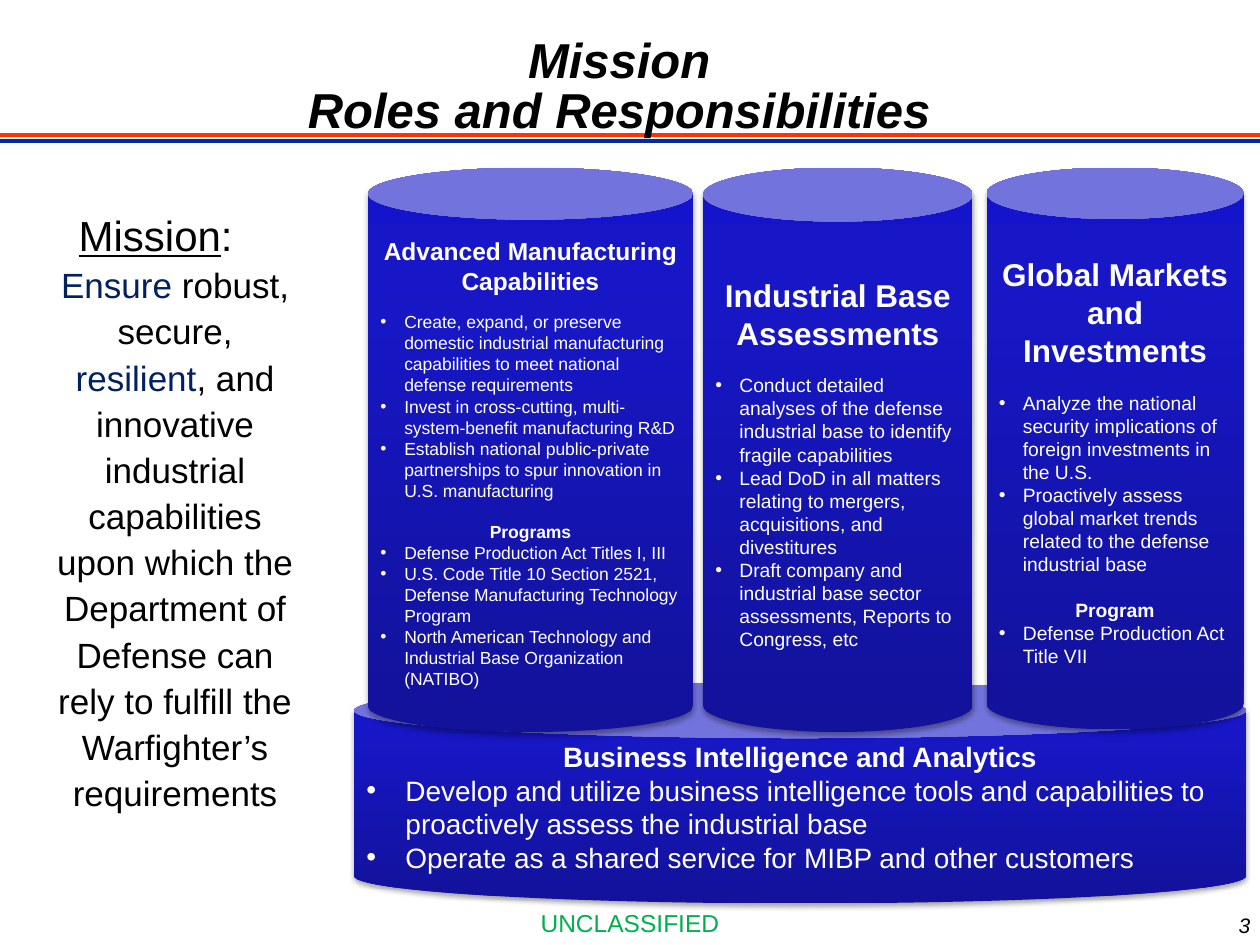
from copy import deepcopy
from dataclasses import dataclass

from lxml import etree
from pptx import Presentation
from pptx.dml.color import RGBColor
from pptx.enum.shapes import MSO_CONNECTOR, MSO_SHAPE
from pptx.enum.text import MSO_ANCHOR, PP_ALIGN
from pptx.oxml.ns import qn
from pptx.util import Inches, Pt

CAN = MSO_SHAPE.CAN
STRAIGHT = MSO_CONNECTOR.STRAIGHT
TOP, MIDDLE = MSO_ANCHOR.TOP, MSO_ANCHOR.MIDDLE
LEFT, CENTER, RIGHT = PP_ALIGN.LEFT, PP_ALIGN.CENTER, PP_ALIGN.RIGHT


@dataclass(frozen=True)
class Theme:
    font: str = "Arial"
    black: str = "000000"
    white: str = "FFFFFF"
    navy: str = "002060"
    green: str = "00B050"
    rule_blue: str = "032AA1"
    rule_red: str = "FF3300"
    can_stops: tuple = ((0, "12129A"), (80, "1717C8"), (100, "1414CC"))
    title: int = 28
    mission_heading: int = 24
    mission: int = 20
    pillar_heading: int = 18
    base: int = 16
    small_heading: int = 14
    footer: int = 12
    pillar: int = 11
    small: int = 10


theme = Theme()

presentation = Presentation()
presentation.slide_width = Inches(10)
presentation.slide_height = Inches(7.5)
slide = presentation.slides.add_slide(presentation.slide_layouts[6])


def add_text(left, top, width, height, anchor=TOP):
    frame = slide.shapes.add_textbox(
        Inches(left), Inches(top), Inches(width), Inches(height)
    ).text_frame
    frame.word_wrap = True
    frame.vertical_anchor = anchor
    return frame


def write(paragraph, text, size, color, align=LEFT, bold=False, italic=False):
    paragraph.alignment = align
    run = paragraph.add_run()
    run.text = text
    run.font.name = theme.font
    run.font.size = Pt(size)
    run.font.color.rgb = RGBColor.from_string(color)
    run.font.bold = bold
    run.font.italic = italic
    return run


for height, color, weight in (
    (1.12, theme.rule_blue, 2.25),
    (1.07, theme.rule_red, 2),
):
    rule = slide.shapes.add_connector(
        STRAIGHT, Inches(0), Inches(height), Inches(10), Inches(height)
    )
    rule.line.color.rgb = RGBColor.from_string(color)
    rule.line.width = Pt(weight)
    etree.SubElement(rule._element.spPr, qn("a:effectLst"))

marking = add_text(0, 7.16, 10, 0.34)
write(marking.paragraphs[0], "UNCLASSIFIED", theme.small_heading, theme.green, CENTER)

title = add_text(1, 0.33, 7.83, 0.75, MIDDLE)
for number, line in enumerate(("Mission", "Roles and Responsibilities")):
    paragraph = title.add_paragraph() if number else title.paragraphs[0]
    paragraph.line_spacing = 0.85
    write(paragraph, line, theme.title, theme.black, CENTER, True, True)

mission = add_text(0, 1.5, 2.65, 5.5)
mission.margin_top = Inches(0.12)
heading = mission.paragraphs[0]
heading.line_spacing = 1.1
heading._p.get_or_add_pPr().set("marR", str(Inches(0.18)))
write(heading, "Mission", theme.mission_heading, theme.black, CENTER).font.underline = True
write(heading, ":", theme.mission_heading, theme.black, CENTER)

statement = mission.add_paragraph()
statement.line_spacing = 1.1
statement._p.get_or_add_pPr().set("marL", str(Inches(0.31)))
for text, color in (
    ("Ensure", theme.navy),
    (" robust, secure, ", theme.black),
    ("resilient", theme.navy),
    (
        ", and innovative industrial capabilities upon which the Department "
        "of Defense can rely to fulfill the Warfighter’s requirements",
        theme.black,
    ),
):
    write(statement, text, theme.mission, color, CENTER)

page_number = add_text(7.94, 7.19, 2.08, 0.27)
write(page_number.paragraphs[0], "3", theme.footer, theme.black, RIGHT, italic=True)

cans = (
    ((2.81, 5.42, 7.08, 1.75), 0.25, theme.base, theme.base, 0.31, 0,
     ("Business Intelligence and Analytics",),
     ("Develop and utilize business intelligence tools and capabilities to "
      "proactively assess the industrial base",
      "Operate as a shared service for MIBP and other customers"),
     None, ()),
    ((2.92, 1.33, 2.58, 4.48), 0.16, theme.small_heading, theme.small, 0.19, 9.2,
     ("Advanced Manufacturing Capabilities",),
     ("Create, expand, or preserve domestic industrial manufacturing "
      "capabilities to meet national defense requirements",
      "Invest in cross-cutting, multi-system-benefit manufacturing R&D",
      "Establish national public-private partnerships to spur innovation in "
      "U.S. manufacturing"),
     "Programs",
     ("Defense Production Act Titles I, III",
      "U.S. Code Title 10 Section 2521, Defense Manufacturing Technology Program",
      "North American Technology and Industrial Base Organization (NATIBO)")),
    ((5.58, 1.33, 2.14, 4.48), 0.2, theme.pillar_heading, theme.pillar, 0.19, 12.6,
     ("Industrial Base Assessments",),
     ("Conduct detailed analyses of the defense industrial base to identify "
      "fragile capabilities",
      "Lead DoD in all matters relating to mergers, acquisitions, and divestitures",
      "Draft company and industrial base sector assessments, Reports to "
      "Congress, etc"),
     None, ()),
    ((7.83, 1.33, 2.04, 4.46), 0.2, theme.pillar_heading, theme.pillar, 0.19, 12.6,
     ("Global Markets", "and Investments"),
     ("Analyze the national security implications of foreign investments in "
      "the U.S.",
      "Proactively assess global market trends related to the defense "
      "industrial base"),
     "Program",
     ("Defense Production Act Title VII",)),
)

for box, lid, heading_size, size, indent, gap, headings, duties, label, programs in cans:
    can = slide.shapes.add_shape(CAN, *(Inches(length) for length in box))
    can.adjustments[0] = lid
    can.line.fill.background()
    can.fill.gradient()
    can.fill.gradient_angle = 90
    stops = can.fill.gradient_stops[0]._gs.getparent()
    stops.insert(1, deepcopy(stops[0]))
    for stop, (position, color) in zip(can.fill.gradient_stops, theme.can_stops):
        stop.position = position / 100
        stop.color.rgb = RGBColor.from_string(color)

    can.shadow.inherit = False
    effects = can._element.spPr.find(qn("a:effectLst"))
    shadow = etree.SubElement(
        effects, qn("a:outerShdw"), blurRad=str(Pt(3.1)), dist=str(Pt(1.8)),
        dir="5400000", rotWithShape="0",
    )
    shade = etree.SubElement(shadow, qn("a:srgbClr"), val=theme.black)
    etree.SubElement(shade, qn("a:alpha"), val="35000")

    frame = can.text_frame
    frame.word_wrap = True
    frame.vertical_anchor = MIDDLE
    lines = [(text, heading_size, True, 0) for text in headings]
    lines += [(text, size, False, 0 if n else gap) for n, text in enumerate(duties)]
    if label:
        lines.append((label, size, True, size * 1.15))
    lines += [(text, size, False, 0) for text in programs]

    for number, (text, text_size, is_heading, space) in enumerate(lines):
        paragraph = frame.add_paragraph() if number else frame.paragraphs[0]
        if space:
            paragraph.space_before = Pt(space)
        if not is_heading:
            properties = paragraph._p.get_or_add_pPr()
            properties.set("marL", str(Inches(indent)))
            properties.set("indent", str(-Inches(indent)))
            etree.SubElement(properties, qn("a:buFont"), typeface=theme.font)
            etree.SubElement(properties, qn("a:buChar"), char="•")
        write(paragraph, text, text_size, theme.white,
              CENTER if is_heading else LEFT, is_heading)

presentation.save("out.pptx")
